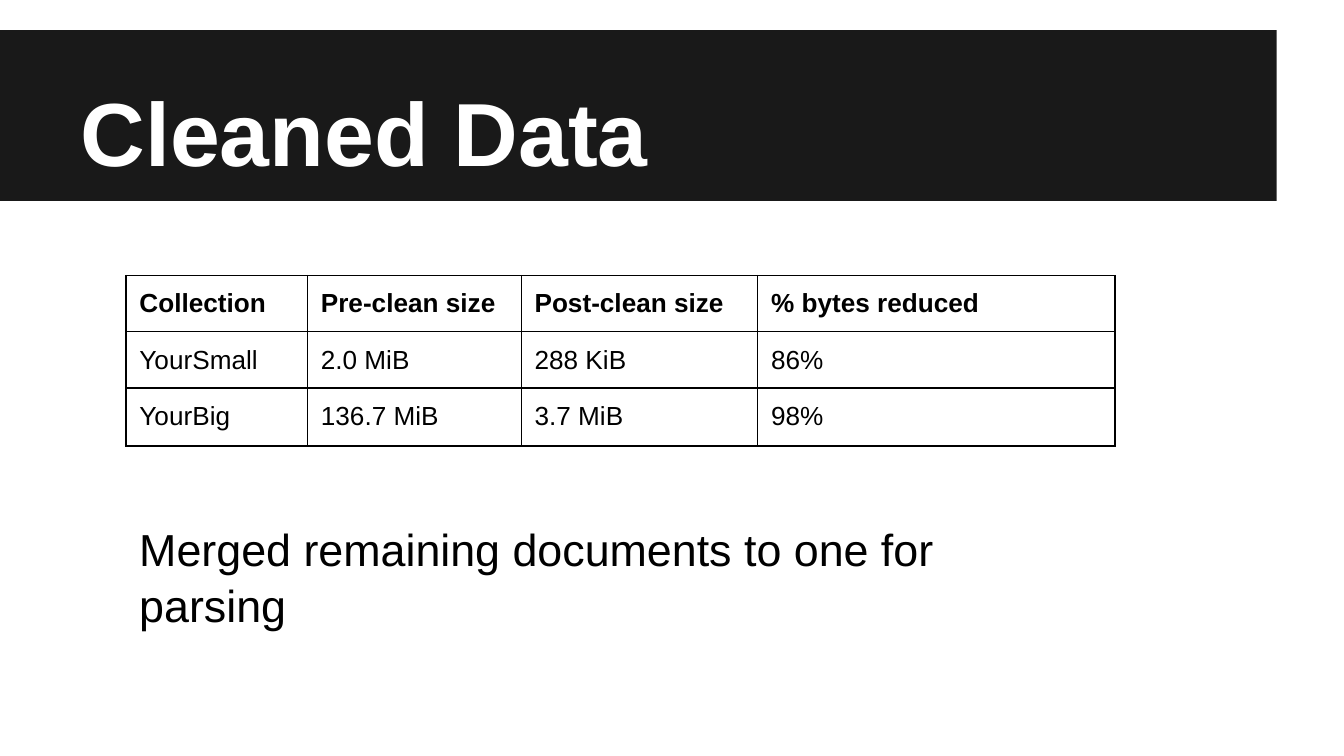
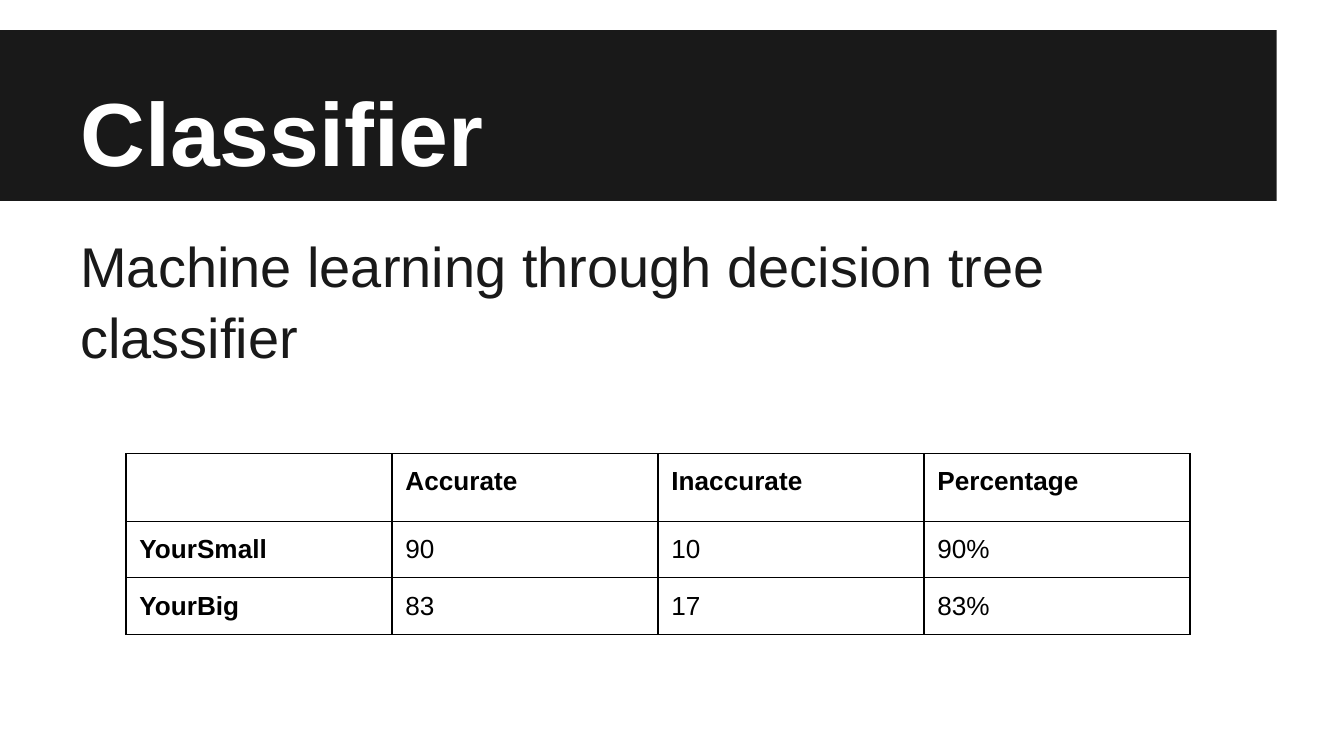
from lxml import etree
from pptx import Presentation
from pptx.dml.color import RGBColor
from pptx.enum.shapes import MSO_SHAPE
from pptx.enum.text import MSO_ANCHOR, MSO_AUTO_SIZE, PP_ALIGN
from pptx.oxml.ns import qn
from pptx.util import Pt

RECTANGLE = MSO_SHAPE.RECTANGLE
TOP, BOTTOM = MSO_ANCHOR.TOP, MSO_ANCHOR.BOTTOM
NO_AUTOFIT = MSO_AUTO_SIZE.NONE
LEFT = PP_ALIGN.LEFT

# Shared style
CHARCOAL = RGBColor(0x19, 0x19, 0x19)
BLACK = RGBColor(0, 0, 0)
WHITE = RGBColor(255, 255, 255)
FONT = "Arial"
INSET = Pt(7.2)
BORDER = Pt(0.75)
TITLE_ONLY = 5

# Boxes: left, top, width, height in points
BAND_BOX = (0, 16.2, 684, 91.5)
TITLE_BOX = (36, 16.2, 648, 90)
TABLE_LEFT = 67.5


def place(shape, box):
    shape.left, shape.top, shape.width, shape.height = map(Pt, box)


def style_paragraph(paragraph, size, color, bold=False):
    paragraph.alignment = LEFT
    for run in paragraph.runs:
        font = run.font
        font.name, font.size, font.bold = FONT, Pt(size), bold
        font.color.rgb = color


def set_text(shape, text, size, color, bold=False, anchor=TOP):
    frame = shape.text_frame
    frame.text = text
    frame.word_wrap = True
    frame.auto_size = NO_AUTOFIT
    frame.vertical_anchor = anchor
    frame.margin_left = frame.margin_right = INSET
    frame.margin_top = frame.margin_bottom = INSET
    style_paragraph(frame.paragraphs[0], size, color, bold)


def add_titled_slide(presentation, title):
    """Slide with a dark band behind its title."""
    slide = presentation.slides.add_slide(presentation.slide_layouts[TITLE_ONLY])
    shapes = slide.shapes

    # Band, sent to the back
    band = shapes.add_shape(RECTANGLE, *map(Pt, BAND_BOX))
    band.shadow.inherit = False
    band.fill.solid()
    band.fill.fore_color.rgb = CHARCOAL
    band.line.fill.background()
    shapes.title._element.addprevious(band._element)

    # Title
    place(shapes.title, TITLE_BOX)
    set_text(shapes.title, title, 48, WHITE, bold=True, anchor=BOTTOM)
    return slide


def add_statement(slide, box, text, size, color):
    statement = slide.shapes.add_textbox(*map(Pt, box))
    set_text(statement, text, size, color)
    statement.text_frame.paragraphs[0].line_spacing = 1.05


def set_borders(cell):
    properties = cell._tc.get_or_add_tcPr()
    for side in ("lnL", "lnR", "lnT", "lnB"):
        line = etree.SubElement(properties, qn(f"a:{side}"), w=str(BORDER))
        fill = etree.SubElement(line, qn("a:solidFill"))
        etree.SubElement(fill, qn("a:srgbClr"), val=str(BLACK))


def add_grid(slide, top, widths, heights, rows, bold_first_column=False):
    """Bordered table with a bold header row."""
    frame = slide.shapes.add_table(
        len(rows), len(widths), Pt(TABLE_LEFT), Pt(top),
        Pt(sum(widths)), Pt(sum(heights)))
    table = frame.table
    table.first_row = table.horz_banding = False
    for column, width in zip(table.columns, widths):
        column.width = Pt(width)
    for row, height in zip(table.rows, heights):
        row.height = Pt(height)
    for i, values in enumerate(rows):
        for j, value in enumerate(values):
            cell = table.cell(i, j)
            cell.text = value
            cell.margin_left = cell.margin_right = INSET
            cell.margin_top = cell.margin_bottom = INSET
            set_borders(cell)
            cell.fill.background()
            bold = i == 0 or (bold_first_column and j == 0)
            style_paragraph(cell.text_frame.paragraphs[0], 14, BLACK, bold)


def build_cleaned_data(presentation):
    slide = add_titled_slide(presentation, "Cleaned Data")
    add_grid(slide, 147.6, (97.2, 114.5, 126.7, 191.5), (30, 30, 31), [
        ("Collection", "Pre-clean size", "Post-clean size", "% bytes reduced"),
        ("YourSmall", "2.0 MiB", "288 KiB", "86%"),
        ("YourBig", "136.7 MiB", "3.7 MiB", "98%"),
    ])
    add_statement(slide, (TABLE_LEFT, 270.7, 502.5, 78.5),
                  "Merged remaining documents to one for parsing", 24, BLACK)


def build_classifier(presentation):
    slide = add_titled_slide(presentation, "Classifier")
    add_statement(slide, (36, 115.2, 648, 272.9),
                  "Machine learning through decision tree classifier",
                  30, CHARCOAL)
    add_grid(slide, 243, (142.5,) * 4, (34.9, 30, 30), [
        ("", "Accurate", "Inaccurate", "Percentage"),
        ("YourSmall", "90", "10", "90%"),
        ("YourBig", "83", "17", "83%"),
    ], bold_first_column=True)


def main():
    presentation = Presentation()
    presentation.slide_width, presentation.slide_height = Pt(720), Pt(405)
    build_cleaned_data(presentation)
    build_classifier(presentation)
    presentation.save("out.pptx")


if __name__ == "__main__":
    main()
